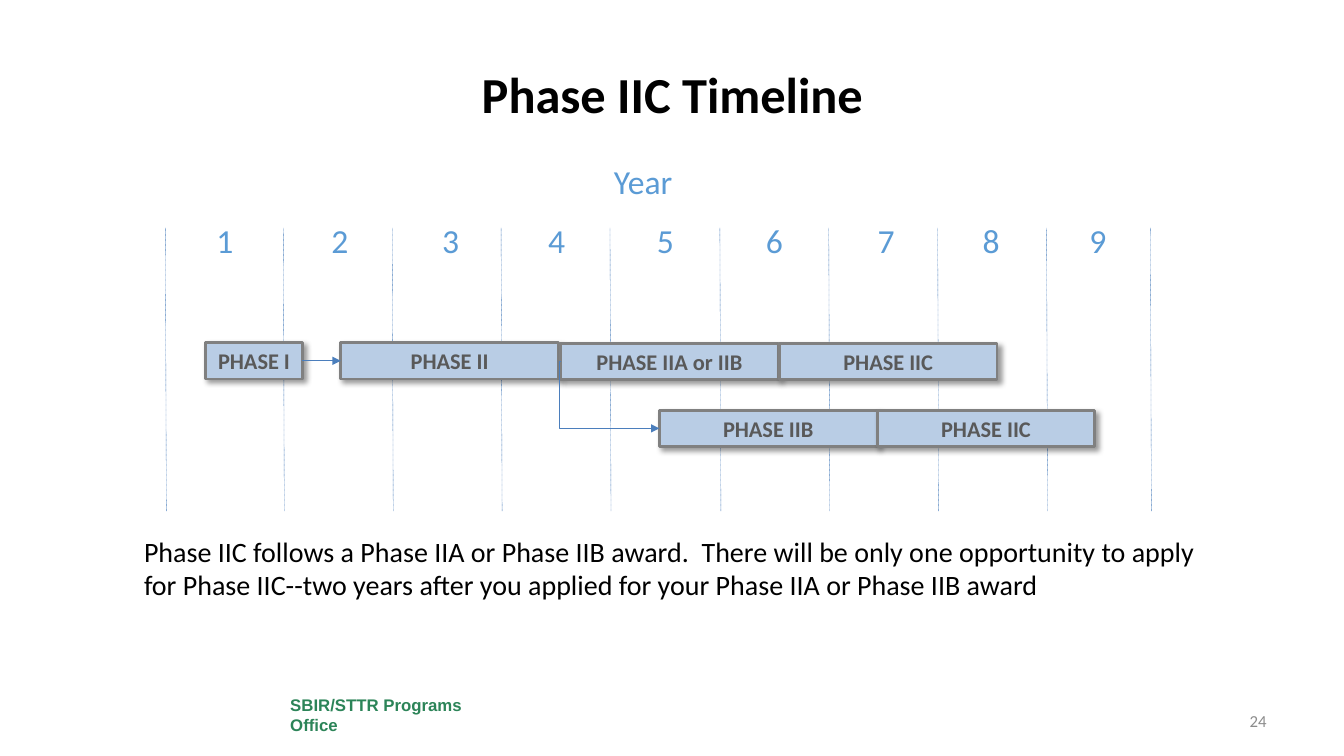
from lxml import etree
from pptx import Presentation
from pptx.dml.color import RGBColor
from pptx.enum.dml import MSO_LINE
from pptx.enum.shapes import MSO_CONNECTOR, MSO_SHAPE
from pptx.enum.text import MSO_ANCHOR, PP_ALIGN
from pptx.oxml.ns import qn
from pptx.util import Pt

PX = 9144  # EMU per px, 100 px to the inch
LEFT, CENTER, RIGHT = PP_ALIGN.LEFT, PP_ALIGN.CENTER, PP_ALIGN.RIGHT
TOP, MIDDLE = MSO_ANCHOR.TOP, MSO_ANCHOR.MIDDLE
STRAIGHT, ELBOW = MSO_CONNECTOR.STRAIGHT, MSO_CONNECTOR.ELBOW
RECT, DOTTED = MSO_SHAPE.RECTANGLE, MSO_LINE.ROUND_DOT

BLACK = RGBColor(0x00, 0x00, 0x00)
WHITE = RGBColor(0xFF, 0xFF, 0xFF)
GREEN = RGBColor(0x2C, 0x84, 0x58)
LINE_BLUE = RGBColor(0x4B, 0x7E, 0xBC)
YEAR_BLUE = RGBColor(0x5B, 0x9B, 0xD5)
BAR_FILL = RGBColor(0xB9, 0xCD, 0xE5)
BAR_LINE = RGBColor(0x80, 0x80, 0x80)
BAR_TEXT = RGBColor(0x59, 0x59, 0x59)
NUMBER_GRAY = RGBColor(0x8C, 0x8C, 0x8C)

prs = Presentation()
prs.slide_width, prs.slide_height = 1333 * PX, 750 * PX
s = prs.slides.add_slide(prs.slide_layouts[5])


def write(sp, text, size, color, align=CENTER, anchor=TOP, bold=False, font="Calibri"):
    tf = sp.text_frame
    tf.text = text
    tf.word_wrap = True
    tf.vertical_anchor = anchor
    p = tf.paragraphs[0]
    p.alignment = align
    r = p.runs[0]
    r.font.name, r.font.size, r.font.bold = font, Pt(size), bold
    r.font.color.rgb = color


def connect(kind, x1, y1, x2, y2, width, arrow=False):
    c = s.shapes.add_connector(kind, x1 * PX, y1 * PX, x2 * PX, y2 * PX)
    c.line.color.rgb = LINE_BLUE
    c.line.width = Pt(width)
    if arrow:
        etree.SubElement(c.line._get_or_add_ln(), qn("a:tailEnd"), type="triangle")
    etree.SubElement(c._element.spPr, qn("a:effectLst"))
    return c


# Footer
footer = s.shapes.add_shape(RECT, 278 * PX, 685 * PX, 211 * PX, 48 * PX)
footer.shadow.inherit = False
footer.fill.solid()
footer.fill.fore_color.rgb = WHITE
footer.line.fill.background()
write(footer, "SBIR/STTR Programs Office", 12, GREEN, LEFT, MIDDLE, True, "Arial")

# Year grid
grid_x = [164] + [281 + round(108.14 * i) for i in range(8)] + [1141]
for x in grid_x:
    connect(STRAIGHT, x, 226, x + 1, 507, 0.25).line.dash_style = DOTTED

# Year numbers
for year, x in enumerate([178, 292, 402, 507, 615, 723, 834, 938, 1044], 1):
    number = s.shapes.add_textbox(x * PX, 213 * PX, 90 * PX, 37 * PX)
    write(number, str(year), 24, YEAR_BLUE)

# Title
title = s.shapes.title
title.left, title.top, title.width, title.height = 67 * PX, 30 * PX, 1200 * PX, 125 * PX
write(title, "Phase IIC Timeline", 36, BLACK, CENTER, MIDDLE, True)

# Other text
for text, x, y, w, h, size, color, align, anchor in [
    ("24", 1161, 695, 105, 40, 12, NUMBER_GRAY, RIGHT, MIDDLE),
    ("Year", 593, 155, 90, 50, 24, YEAR_BLUE, CENTER, TOP),
    ("Phase IIC follows a Phase IIA or Phase IIB award.  There will be only one "
     "opportunity to apply for Phase IIC--two years after you applied for your "
     "Phase IIA or Phase IIB award", 133, 525, 1072, 77, 20, BLACK, LEFT, TOP),
]:
    box = s.shapes.add_textbox(x * PX, y * PX, w * PX, h * PX)
    write(box, text, size, color, align, anchor)

# Phase bars
bars = []
for text, x, y, w in [
    ("PHASE I", 204, 340, 96),
    ("PHASE II", 338, 340, 216),
    ("PHASE IIB", 654, 407, 216),
    ("PHASE IIC", 870, 407, 216),
    ("PHASE IIA or IIB", 556, 341, 216),
    ("PHASE IIC", 773, 341, 216),
]:
    bar = s.shapes.add_shape(RECT, x * PX, y * PX, w * PX, 36 * PX)
    bar.fill.solid()
    bar.fill.fore_color.rgb = BAR_FILL
    bar.line.color.rgb = BAR_LINE
    bar.line.width = Pt(2)
    bar.shadow.inherit = False
    effects = bar._element.spPr.find(qn("a:effectLst"))
    shadow = etree.SubElement(effects, qn("a:outerShdw"), blurRad=str(Pt(4)),
                              dist=str(Pt(3)), dir="2700000", algn="tl", rotWithShape="0")
    tint = etree.SubElement(shadow, qn("a:srgbClr"), val="000000")
    etree.SubElement(tint, qn("a:alpha"), val="40000")
    write(bar, text, 16, BAR_TEXT, CENTER, MIDDLE, True)
    bar.text_frame.margin_left = bar.text_frame.margin_right = 5 * PX
    bars.append(bar)

# Arrows between phases
arrow = connect(STRAIGHT, 300, 358, 338, 358, 0.75, True)
arrow.begin_connect(bars[0], 3)
arrow.end_connect(bars[1], 1)

branch = connect(ELBOW, 556, 359, 654, 425, 0.75, True)
geometry = branch._element.spPr.find(qn("a:prstGeom"))
etree.SubElement(geometry.get_or_add_avLst(), qn("a:gd"), name="adj1", fmla="val -1600")

prs.save("out.pptx")
